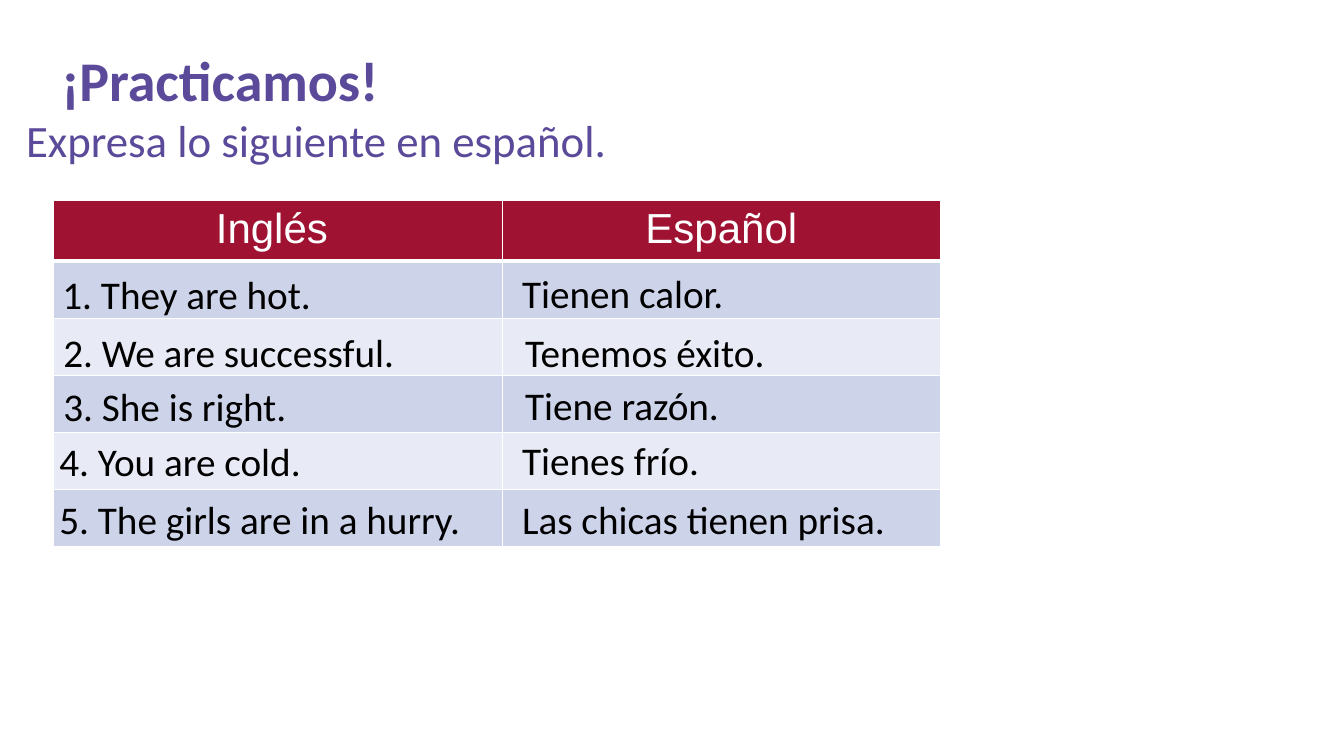
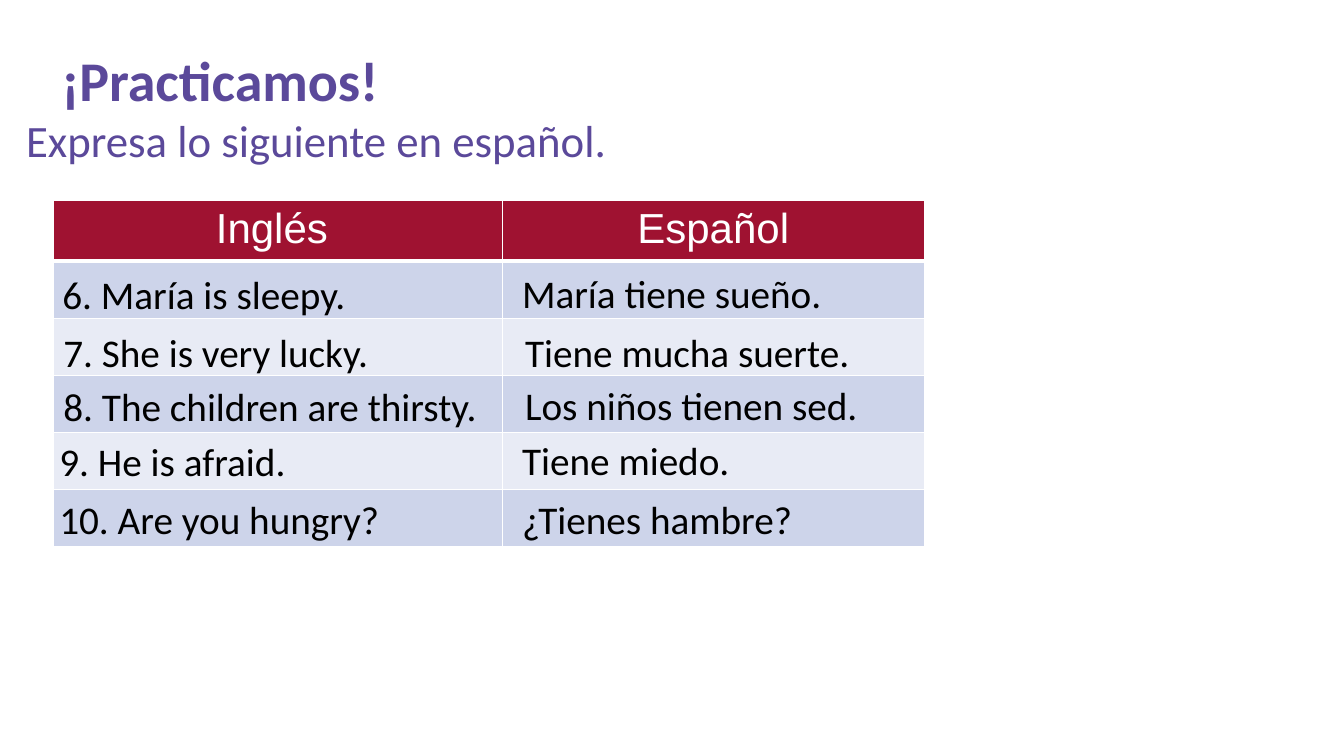
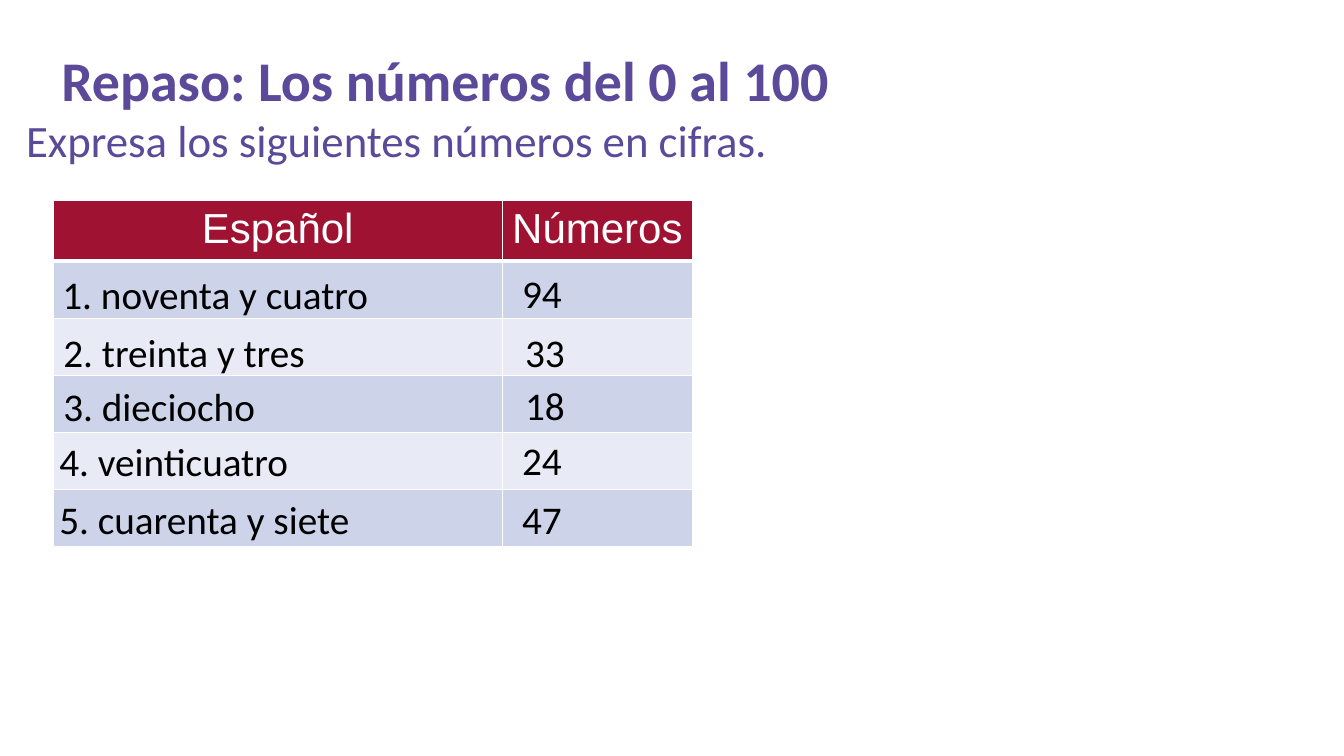
from lxml.etree import SubElement
from pptx import Presentation
from pptx.dml.color import RGBColor
from pptx.enum.text import PP_ALIGN
from pptx.oxml import parse_xml
from pptx.oxml.ns import nsdecls
from pptx.util import Inches, Pt

PURPLE = RGBColor(0x5B, 0x49, 0x9A)
CRIMSON = RGBColor(0x9F, 0x12, 0x31)
BLUE = RGBColor(0xCD, 0xD4, 0xEA)
PALE = RGBColor(0xE8, 0xEB, 0xF5)
WHITE = RGBColor(0xFF, 0xFF, 0xFF)
BLACK = RGBColor(0, 0, 0)

SLIDES = [
    {
        "title": "¡Practicamos!",
        "task": "Expresa lo siguiente en español.",
        "head": ("Inglés ", "Español"),
        "answer_w": 4.35,
        "rows": [
            ("1. They are hot.", "Tienen calor."),
            ("2. We are successful.", "Tenemos éxito."),
            ("3. She is right.", "Tiene razón."),
            ("4. You are cold.", "Tienes frío."),
            ("5. The girls are in a hurry.", "Las chicas tienen prisa."),
        ],
    },
    {
        "title": "¡Practicamos!",
        "task": "Expresa lo siguiente en español.",
        "head": ("Inglés ", "Español"),
        "answer_w": 4.19,
        "rows": [
            ("6. María is sleepy.", "María tiene sueño."),
            ("7. She is very lucky.", "Tiene mucha suerte."),
            ("8. The children are thirsty.", "Los niños tienen sed."),
            ("9. He is afraid.", "Tiene miedo."),
            ("10. Are you hungry?", "¿Tienes hambre?"),
        ],
    },
    {
        "title": "Repaso: Los números del 0 al 100",
        "task": "Expresa los siguientes números en cifras.",
        "head": ("Español", "Números"),
        "answer_w": 1.89,
        "rows": [
            ("1. noventa y cuatro", "94"),
            ("2. treinta y tres", "33"),
            ("3. dieciocho", "18"),
            ("4. veinticuatro", "24"),
            ("5. cuarenta y siete", "47"),
        ],
    },
]

TABLE_X, TABLE_Y, TABLE_H = 0.53, 1.99, 3.43
HEAD_H, PROMPT_W, LINE_H = 0.6, 4.45, 0.56
PROMPT_AT = [(0.52, 2.63), (0.53, 3.21), (0.53, 3.74), (0.49, 4.29), (0.49, 4.86)]
ANSWER_AT = [(5.08, 2.62), (5.11, 3.21), (5.11, 3.73), (5.08, 4.28), (5.08, 4.86)]
THIN, THICK = 0.96, 3


def write(tf, text, size=28, color=BLACK, font="Calibri", bold=False, align=PP_ALIGN.LEFT):
    p = tf.paragraphs[0]
    p.alignment = align
    r = p.add_run()
    r.text = text
    r.font.size, r.font.name, r.font.bold = Pt(size), font, bold
    r.font.color.rgb = color


def add_text(s, text, x, y, w, h, **style):
    tf = s.shapes.add_textbox(Inches(x), Inches(y), Inches(w), Inches(h)).text_frame
    tf.word_wrap = True
    write(tf, text, **style)


def style_cell(cell, fill, top, bottom):
    cell.fill.solid()
    cell.fill.fore_color.rgb = fill
    cell.margin_left = cell.margin_right = Inches(0.08)
    tc_pr = cell._tc.get_or_add_tcPr()
    widths = {"lnL": THIN, "lnR": THIN, "lnT": top, "lnB": bottom}
    for i, (side, width) in enumerate(widths.items()):
        ln = parse_xml(f'<a:{side} {nsdecls("a")} w="{Pt(width)}"><a:solidFill/></a:{side}>')
        SubElement(ln[0], ln[0].tag.replace("solidFill", "srgbClr"), val=str(WHITE))
        tc_pr.insert(i, ln)


def add_grid(s, head, answer_w, count):
    widths = (PROMPT_W, answer_w)
    table = s.shapes.add_table(count + 1, len(widths), Inches(TABLE_X), Inches(TABLE_Y),
                               Inches(sum(widths)), Inches(TABLE_H)).table
    for col, width in zip(table.columns, widths):
        col.width = Inches(width)
    for i, row in enumerate(table.rows):
        row.height = Inches((TABLE_H - HEAD_H) / count if i else HEAD_H)
        fill = (BLUE if i % 2 else PALE) if i else CRIMSON
        for cell in row.cells:
            style_cell(cell, fill, THICK if i == 1 else THIN, THIN if i else THICK)
    for cell, text in zip(table.rows[0].cells, head):
        write(cell.text_frame, text, size=30, color=WHITE, font="Arial", align=PP_ALIGN.CENTER)


def add_exercise(prs, title, task, head, answer_w, rows):
    s = prs.slides.add_slide(prs.slide_layouts[6])
    add_text(s, title, 0.51, 0.4, 11.5, 0.68, size=40, color=PURPLE, bold=True)
    add_text(s, task, 0.16, 1.07, 13.01, 1.23, size=32, color=PURPLE)
    add_grid(s, head, answer_w, len(rows))
    for (prompt, answer), prompt_at, answer_at in zip(rows, PROMPT_AT, ANSWER_AT):
        add_text(s, prompt, *prompt_at, PROMPT_W, LINE_H)
        add_text(s, answer, *answer_at, answer_w, LINE_H)


def main():
    prs = Presentation()
    prs.slide_width, prs.slide_height = Inches(13.33), Inches(7.5)
    for slide in SLIDES:
        add_exercise(prs, **slide)
    prs.save("out.pptx")


if __name__ == "__main__":
    main()
